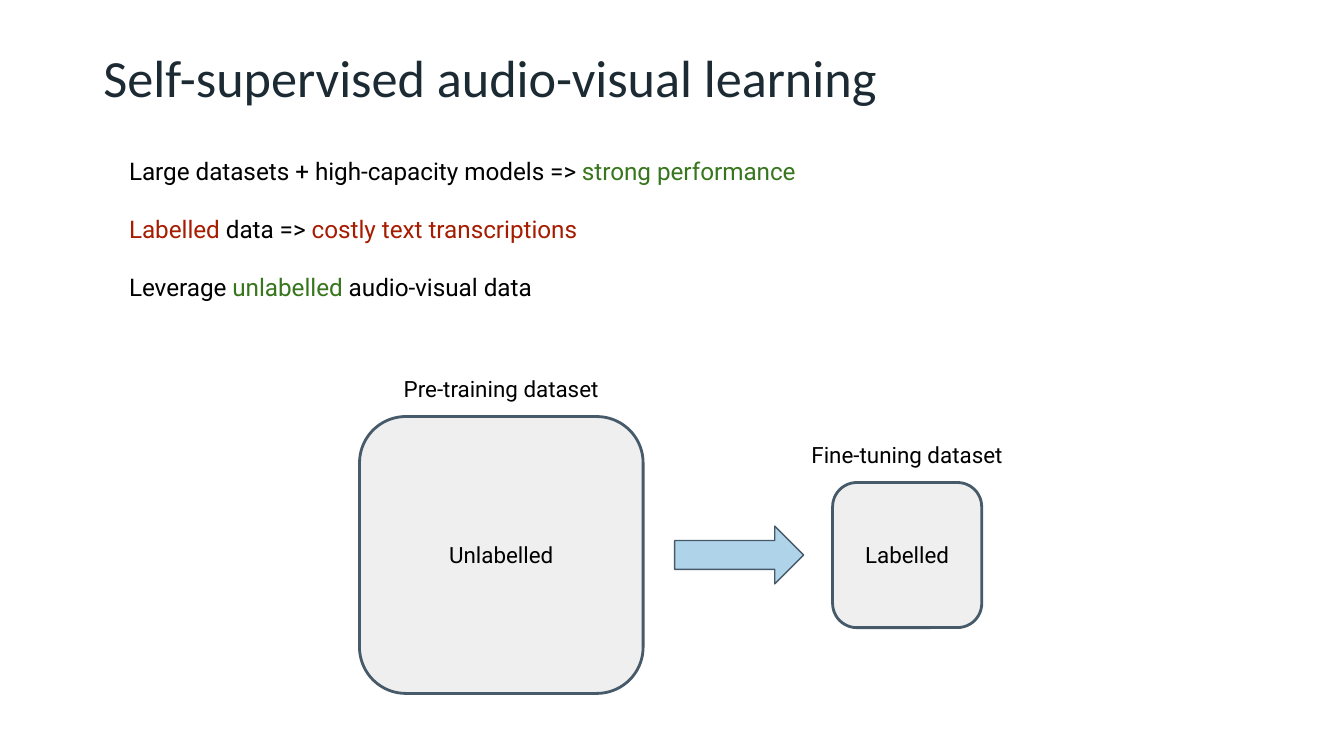
from dataclasses import dataclass

from lxml import etree
from pptx import Presentation
from pptx.dml.color import RGBColor
from pptx.enum.shapes import MSO_SHAPE
from pptx.enum.text import MSO_ANCHOR, MSO_AUTO_SIZE, PP_ALIGN
from pptx.oxml.ns import qn
from pptx.util import Inches, Pt

ROUNDED = MSO_SHAPE.ROUNDED_RECTANGLE
ARROW = MSO_SHAPE.RIGHT_ARROW
LEFT, CENTER = PP_ALIGN.LEFT, PP_ALIGN.CENTER
TOP = MSO_ANCHOR.TOP
NO_AUTOFIT = MSO_AUTO_SIZE.NONE


@dataclass(frozen=True)
class Theme:
    title_font: str = "Calibri"
    body_font: str = "Roboto"
    title_size: int = 28
    body_size: int = 13
    label_size: int = 12
    title: str = "1C2B33"
    text: str = "000000"
    good: str = "38761D"
    bad: str = "A61C00"
    dataset: str = "EFEFEF"
    flow: str = "AFD3E8"
    outline: str = "465A69"


THEME = Theme()
SLIDE_WIDTH = Inches(10)
SLIDE_HEIGHT = SLIDE_WIDTH * 9 // 16
FLOW_Y = 4.13
LABEL_HEIGHT = 0.3
CAPTION_RISE = 0.36

POINTS = [
    [("Large datasets + high-capacity models => ", THEME.text),
     ("strong performance", THEME.good)],
    [("Labelled", THEME.bad), (" data => ", THEME.text),
     ("costly text transcriptions", THEME.bad)],
    [("Leverage ", THEME.text), ("unlabelled", THEME.good),
     (" audio-visual data", THEME.text)],
]

DATASETS = [
    ("Pre-training dataset", "Unlabelled", 3.73, 2.11, 2.06, 1.84),
    ("Fine-tuning dataset", "Labelled", 6.75, 1.11, 1.08, 1.17),
]


def apply_format(target, values):
    for attribute, value in values.items():
        setattr(target, attribute, value)


def place(holder, left, top, width, height):
    apply_format(holder, {
        "left": Inches(left), "top": Inches(top),
        "width": Inches(width), "height": Inches(height),
    })


def set_frame(frame, inset):
    margin = Inches(inset)
    apply_format(frame, {
        "margin_left": margin, "margin_top": margin,
        "margin_right": margin, "margin_bottom": margin,
        "word_wrap": True, "auto_size": NO_AUTOFIT, "vertical_anchor": TOP,
    })


def add_run(paragraph, words, font, size, color):
    run = paragraph.add_run()
    run.text = words
    apply_format(run.font, {"name": font, "size": Pt(size)})
    run.font.color.rgb = RGBColor.from_string(color)


def fill_title(title):
    place(title, 0.77, 0.34, 6.97, 0.92)
    set_frame(title.text_frame, 0)
    heading = title.text_frame.paragraphs[0]
    heading.alignment = LEFT
    add_run(heading, "Self-supervised audio-visual learning",
            THEME.title_font, THEME.title_size, THEME.title)


def fill_points(body):
    place(body, 0.91, 1.11, 7.52, 1.2)
    frame = body.text_frame
    set_frame(frame, 0.05)
    for index, phrases in enumerate(POINTS):
        point = frame.add_paragraph() if index else frame.paragraphs[0]
        apply_format(point, {"space_before": Pt(0), "space_after": Pt(15.6),
                             "alignment": LEFT})
        properties = point._p.get_or_add_pPr()
        properties.set("marL", "0")
        properties.set("indent", "0")
        etree.SubElement(properties, qn("a:buNone"))
        for words, color in phrases:
            add_run(point, words, THEME.body_font, THEME.body_size, color)


def add_block(diagram, kind, center, width, height, fill, weight, adjustments):
    block = diagram.shapes.add_shape(
        kind, Inches(center - width / 2), Inches(FLOW_Y - height / 2),
        Inches(width), Inches(height))
    block.shadow.inherit = False
    for index, value in enumerate(adjustments):
        block.adjustments[index] = value
    block.fill.solid()
    block.fill.fore_color.rgb = RGBColor.from_string(fill)
    block.line.color.rgb = RGBColor.from_string(THEME.outline)
    block.line.width = Pt(weight)


def add_label(diagram, words, center, top, width):
    label = diagram.shapes.add_textbox(
        Inches(center - width / 2), Inches(top),
        Inches(width), Inches(LABEL_HEIGHT))
    set_frame(label.text_frame, 0.05)
    line = label.text_frame.paragraphs[0]
    line.alignment = CENTER
    add_run(line, words, THEME.body_font, THEME.label_size, THEME.text)


def add_dataset(diagram, caption, content, center, width, height, content_width):
    add_block(diagram, ROUNDED, center, width, height,
              THEME.dataset, 1.5, [0.167])
    add_label(diagram, caption, center,
              FLOW_Y - height / 2 - CAPTION_RISE, 1.84)
    add_label(diagram, content, center,
              FLOW_Y - LABEL_HEIGHT / 2, content_width)


def main():
    deck = Presentation()
    apply_format(deck, {"slide_width": SLIDE_WIDTH,
                        "slide_height": SLIDE_HEIGHT})
    slide = deck.slides.add_slide(deck.slide_layouts[1])
    fill_title(slide.shapes.title)
    fill_points(slide.placeholders[1])
    diagram = slide.shapes.add_group_shape()
    for dataset in DATASETS:
        add_dataset(diagram, *dataset)
    add_block(diagram, ARROW, 5.5, 0.96, 0.43, THEME.flow, 0.75, [0.5, 0.5])
    deck.save("out.pptx")


if __name__ == "__main__":
    main()
